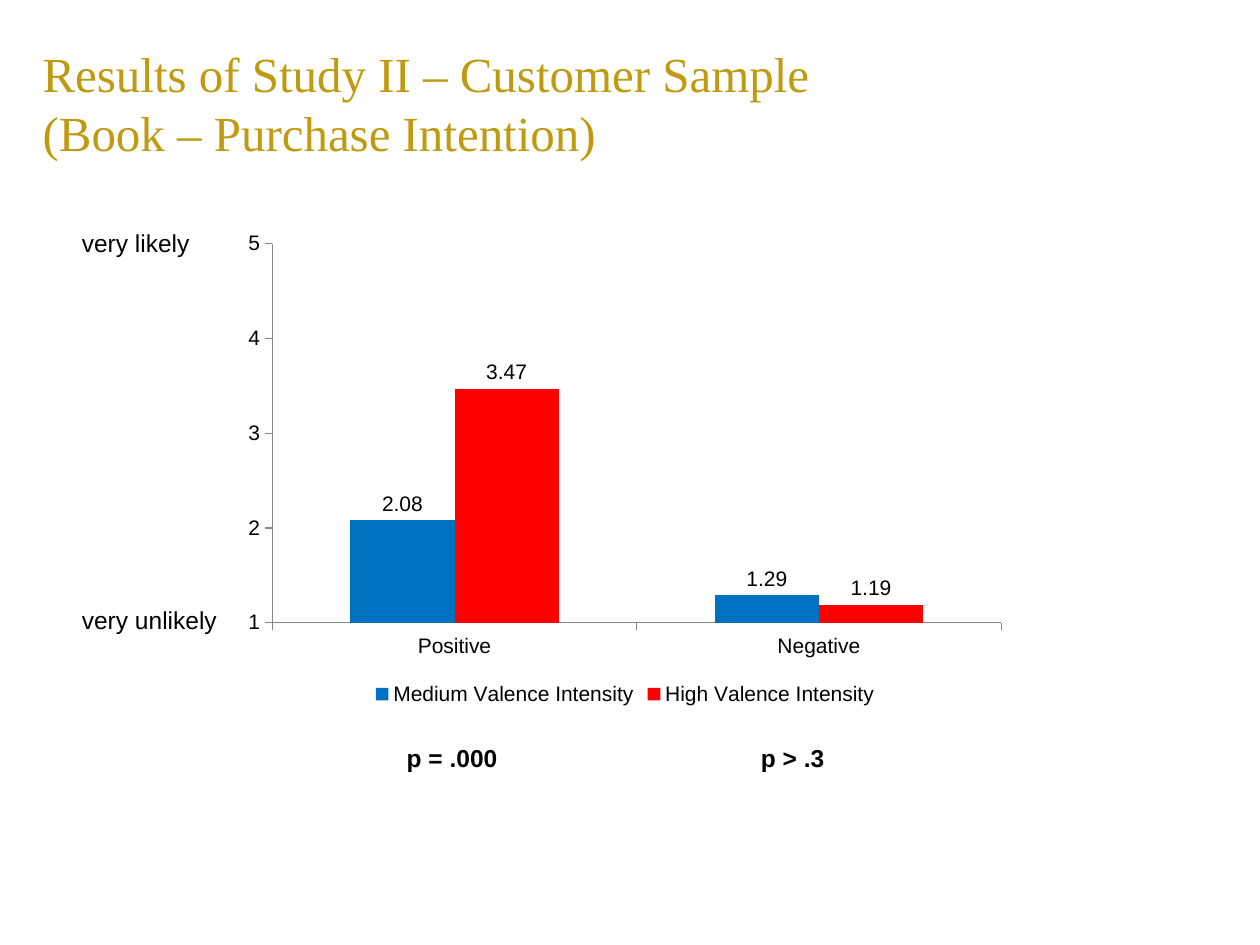
from dataclasses import dataclass

from lxml import etree
from pptx import Presentation
from pptx.chart.data import CategoryChartData
from pptx.dml.color import RGBColor
from pptx.enum.chart import XL_CHART_TYPE as ChartType
from pptx.enum.chart import XL_LABEL_POSITION as LabelPosition
from pptx.enum.chart import XL_LEGEND_POSITION as LegendPosition
from pptx.enum.chart import XL_TICK_MARK as TickMark
from pptx.enum.text import MSO_ANCHOR as Anchor
from pptx.oxml.ns import qn
from pptx.slide import Slide
from pptx.util import Cm, Pt

GOLD = RGBColor(0xC0, 0x9B, 0x12)
BLACK = RGBColor(0, 0, 0)
GREY = RGBColor(0x86, 0x86, 0x86)
BLUE = RGBColor(0x00, 0x70, 0xC0)
RED = RGBColor(0xFF, 0, 0)


@dataclass
class ResultSlide:
    """Adds the elements of a study result to a slide in one style."""

    slide: Slide
    title_font: str = "Times New Roman"
    body_font: str = "Arial"

    def set_font(self, font, name, size, color, bold=False):
        font.name = name
        font.size = Pt(size)
        font.color.rgb = color
        font.bold = bold

    def add_text(self, text, left, top, width, height, wrap=False):
        box = self.slide.shapes.add_textbox(Cm(left), Cm(top), Cm(width), Cm(height))
        box.text_frame.word_wrap = wrap
        box.text_frame.text = text
        return box.text_frame

    def add_title(self, text, *place):
        text_frame = self.add_text(text, *place, wrap=True)
        text_frame.vertical_anchor = Anchor.MIDDLE
        run = text_frame.paragraphs[0].runs[0]
        self.set_font(run.font, self.title_font, 28, GOLD)

    def add_label(self, text, left, top, width, bold=False):
        text_frame = self.add_text(text, left, top, width, 0.86)
        run = text_frame.paragraphs[0].runs[0]
        self.set_font(run.font, self.body_font, 14, BLACK, bold)

    def add_column_chart(self, categories, series, plot_area, *place):
        data = CategoryChartData(number_format="0.00")
        data.categories = categories
        for name, values, _ in series:
            data.add_series(name, values)
        frame = self.slide.shapes.add_chart(
            ChartType.COLUMN_CLUSTERED, *map(Cm, place), data)
        chart = frame.chart
        self.set_font(chart.font, self.body_font, 12, BLACK)
        chart.has_title = False
        chart.has_legend = True
        chart.legend.position = LegendPosition.BOTTOM
        chart.legend.include_in_layout = False

        plot = chart.plots[0]
        plot.gap_width = 150
        plot.overlap = 0
        plot.vary_by_categories = False
        for columns, (_, _, color) in zip(plot.series, series):
            columns.format.fill.solid()
            columns.format.fill.fore_color.rgb = color
            labels = columns.data_labels
            labels.show_value = True
            labels.position = LabelPosition.OUTSIDE_END

        for axis in (chart.category_axis, chart.value_axis):
            axis.has_major_gridlines = False
            axis.major_tick_mark = TickMark.OUTSIDE
            axis.format.line.color.rgb = GREY
        axis = chart.value_axis
        axis.minimum_scale, axis.maximum_scale, axis.major_unit = 1, 5, 1
        axis.tick_labels.number_format = "0"
        axis.tick_labels.number_format_is_linked = False
        self.place_plot(chart, plot_area)

    def place_plot(self, chart, plot_area):
        area = chart.element.find(".//" + qn("c:plotArea"))
        layout = area.find(qn("c:layout"))
        if layout is None:
            layout = etree.Element(qn("c:layout"))
            area.insert(0, layout)
        manual = etree.SubElement(layout, qn("c:manualLayout"))
        settings = {"layoutTarget": "inner", "xMode": "edge", "yMode": "edge"}
        settings.update(zip("xywh", plot_area))
        for tag, value in settings.items():
            etree.SubElement(manual, qn("c:" + tag)).set("val", str(value))


def main():
    presentation = Presentation()
    presentation.slide_width, presentation.slide_height = Cm(25.4), Cm(19.05)
    result = ResultSlide(
        presentation.slides.add_slide(presentation.slide_layouts[6]))
    result.add_title(
        "Results of Study II – Customer Sample (Book – Purchase Intention)",
        0.61, 1.09, 17.7, 1.96)
    series = [
        ("Medium Valence Intensity", (2.08, 1.29), BLUE),
        ("High Valence Intensity", (3.47, 1.19), RED),
    ]
    result.add_column_chart(
        ("Positive", "Negative"), series, (0.05, 0.04, 0.93, 0.78),
        4.7, 4.52, 15.8, 9.8)
    result.add_label("p = .000", 7.95, 14.86, 2.36, bold=True)
    result.add_label("p > .3", 15.09, 14.86, 1.8, bold=True)
    result.add_label("very unlikely", 1.4, 12.07, 3.3)
    result.add_label("very likely", 1.4, 4.47, 2.69)
    presentation.save("out.pptx")


if __name__ == "__main__":
    main()
